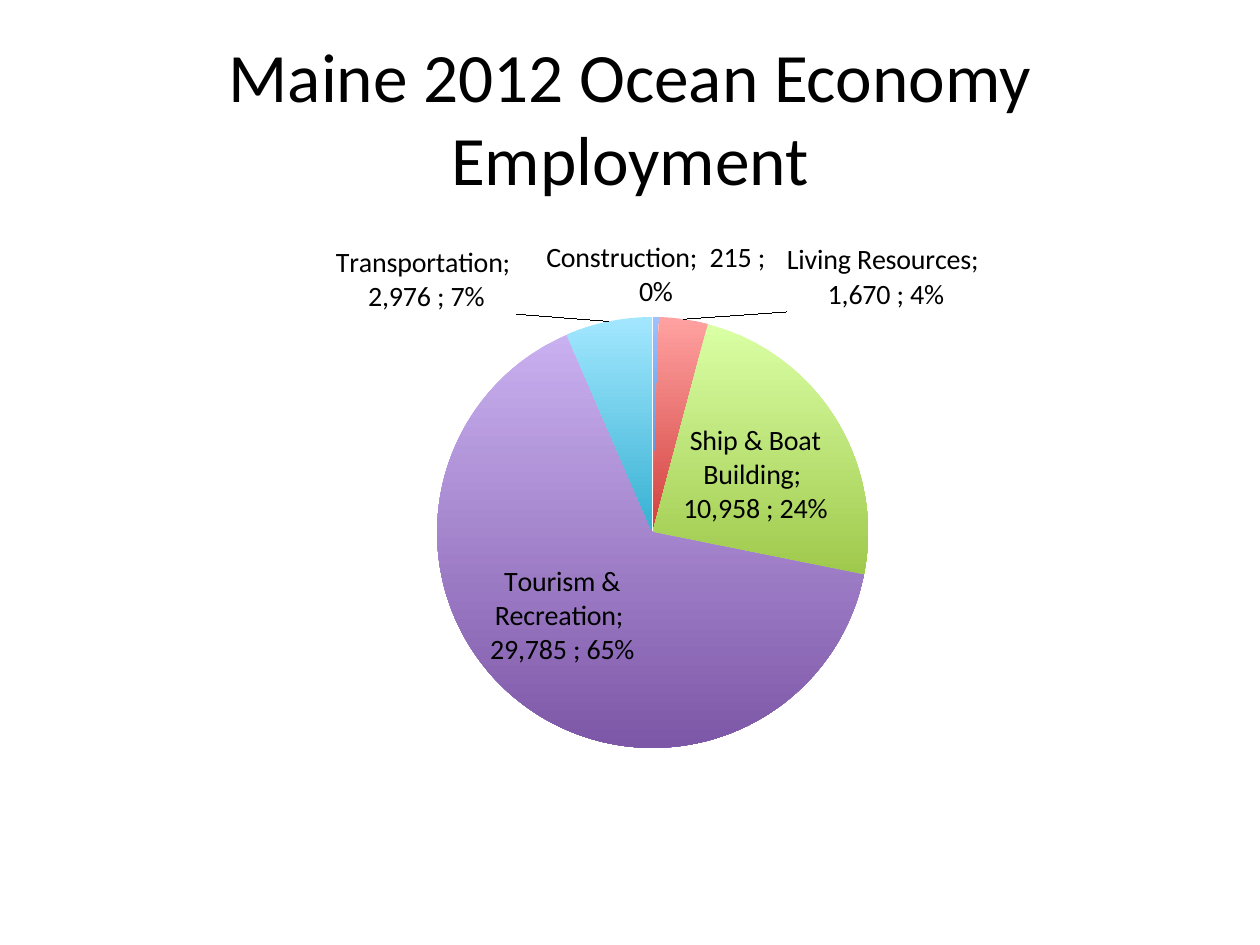
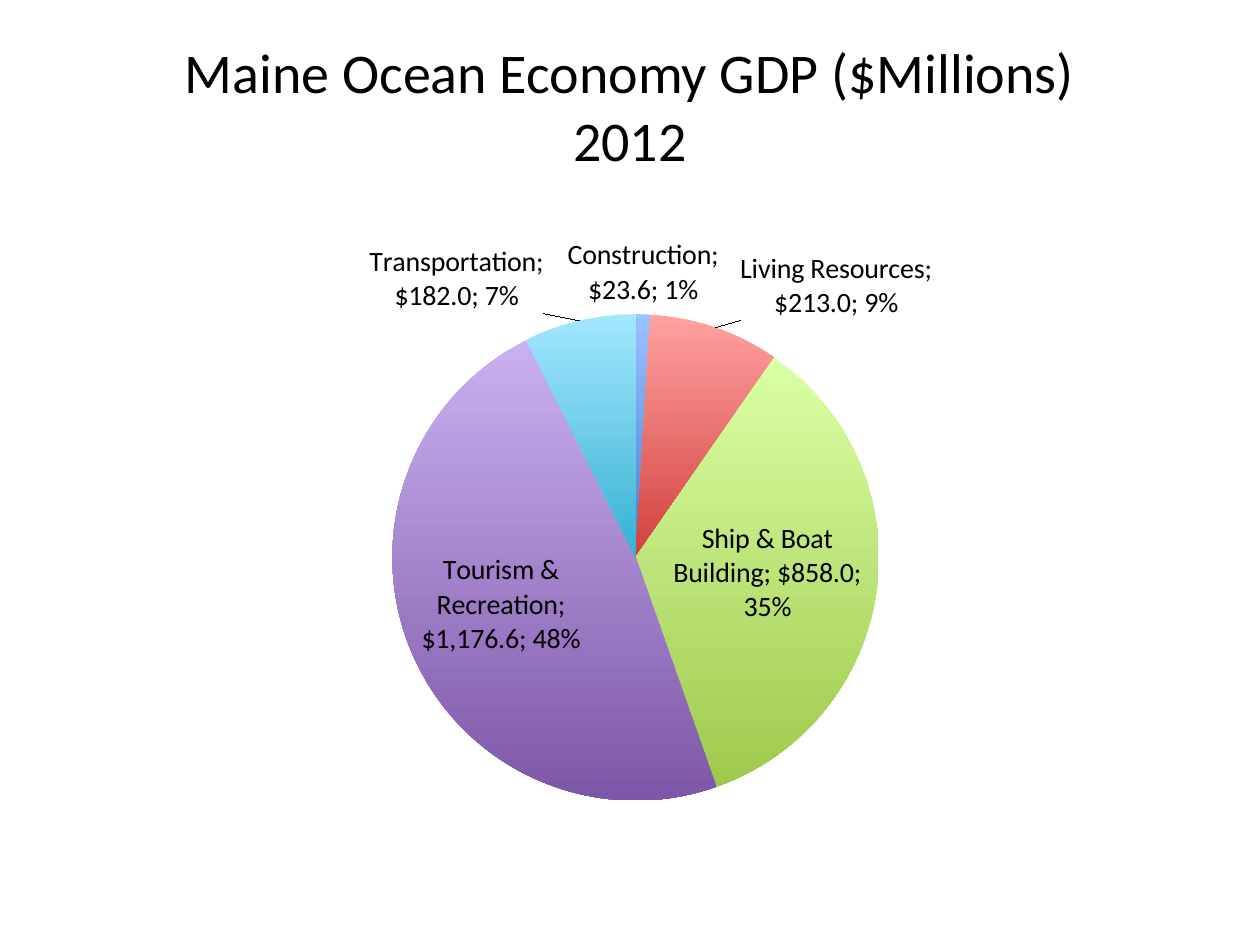
from dataclasses import dataclass, field

from lxml import etree
from pptx import Presentation
from pptx.chart.data import CategoryChartData
from pptx.dml.color import RGBColor
from pptx.enum.chart import XL_CHART_TYPE, XL_LABEL_POSITION
from pptx.enum.text import MSO_ANCHOR, PP_ALIGN
from pptx.oxml.ns import qn
from pptx.util import Cm, Pt

PIE = XL_CHART_TYPE.PIE
OUTSIDE = XL_LABEL_POSITION.OUTSIDE_END
INSIDE = XL_LABEL_POSITION.CENTER
MIDDLE = MSO_ANCHOR.MIDDLE
CENTER = PP_ALIGN.CENTER


@dataclass(frozen=True)
class Theme:
    font: str = "Calibri"
    ink: str = "000000"
    paper: str = "FFFFFF"
    chart_size: float = 18
    label_size: float = 16
    gradients: dict = field(default_factory=lambda: {
        "Construction": ("9BC1FF", "3F80CD"),
        "Living Resources": ("FFA2A1", "D1403C"),
        "Ship & Boat Building": ("DAFFA5", "9FC94C"),
        "Tourism & Recreation": ("C9B0F0", "7D57A7"),
        "Transportation": ("A3E7FF", "36B1D2"),
    })


@dataclass(frozen=True)
class SectorLabel:
    position: object
    dx: float = 0


@dataclass(frozen=True)
class SectorSlide:
    title: str
    title_top: float
    title_size: float
    values: tuple
    number_format: str
    pie_box: tuple
    labels: tuple


THEME = Theme()
LEFT, WIDTH = Cm(1.27), Cm(22.86)
TITLE_HEIGHT = Cm(3.18)
CHART_TOP, CHART_HEIGHT = Cm(4.45), Cm(12.57)

SLIDES = (
    SectorSlide(
        "Maine 2012 Ocean Economy Employment", 0.76, 39.6,
        (215, 1670, 10958, 29785, 2976),
        '_(* #,##0_);_(* \\(#,##0\\);_(* "-"??_);_(@_)',
        (0.33, 0.15, 0.38, 0.7),
        (SectorLabel(OUTSIDE), SectorLabel(OUTSIDE, 0.09),
         SectorLabel(INSIDE, 0.01), SectorLabel(INSIDE, -0.02),
         SectorLabel(OUTSIDE, -0.08)),
    ),
    SectorSlide(
        "Maine Ocean Economy GDP ($Millions)\n2012", 0.53, 32,
        (23.6, 213, 858, 1176.6, 182),
        '"$"#,##0.0',
        (0.29, 0.15, 0.43, 0.78),
        (SectorLabel(OUTSIDE), SectorLabel(OUTSIDE, 0.02),
         SectorLabel(INSIDE, 0.01), SectorLabel(INSIDE, -0.02),
         SectorLabel(OUTSIDE, -0.03)),
    ),
)


def style_font(font, size: float) -> None:
    font.name = THEME.font
    font.size = Pt(size)
    font.color.rgb = RGBColor.from_string(THEME.ink)


def add_text(slide, text: str, *, top: float, size: float,
             align=CENTER, anchor=MIDDLE) -> None:
    frame = slide.shapes.add_textbox(LEFT, Cm(top), WIDTH, TITLE_HEIGHT).text_frame
    frame.word_wrap = True
    frame.vertical_anchor = anchor
    paragraph = frame.paragraphs[0]
    paragraph.text = text
    paragraph.alignment = align
    for run in paragraph.runs:
        style_font(run.font, size)


def set_layout(parent, index: int, **settings) -> None:
    for previous in parent.findall(qn("c:layout")):
        parent.remove(previous)
    layout = etree.Element(qn("c:layout"))
    manual = etree.SubElement(layout, qn("c:manualLayout"))
    for tag, value in settings.items():
        etree.SubElement(manual, qn(f"c:{tag}")).set("val", str(value))
    parent.insert(index, layout)


def add_separator(label) -> None:
    separator = etree.Element(qn("c:separator"))
    separator.text = "; "
    label.find(qn("c:showBubbleSize")).addnext(separator)


def show_label_parts(label) -> None:
    for tag in ("showVal", "showCatName", "showPercent"):
        label.find(qn(f"c:{tag}")).set("val", "1")
    add_separator(label)


def format_sectors(series, placements: tuple) -> None:
    for index, (placement, gradient) in enumerate(
            zip(placements, THEME.gradients.values())):
        point = series.points[index]
        fill = point.format.fill
        fill.gradient()
        fill.gradient_angle = 270
        for stop, color in zip(fill.gradient_stops, gradient):
            stop.color.rgb = RGBColor.from_string(color)
        point.format.line.fill.background()
        style_font(point.data_label.font, THEME.label_size)
        point.data_label.position = placement.position

    style_font(series.data_labels.font, THEME.label_size)
    group = series._element.find(qn("c:dLbls"))
    show_label_parts(group)
    for label, placement in zip(group.findall(qn("c:dLbl")), placements):
        show_label_parts(label)
        if placement.dx:
            set_layout(label, 1, x=placement.dx, y=0)


def add_sector_pie(slide, content: SectorSlide) -> None:
    sectors = CategoryChartData(number_format=content.number_format)
    sectors.categories = list(THEME.gradients)
    sectors.add_series("Series 1", content.values)
    chart = slide.shapes.add_chart(
        PIE, LEFT, CHART_TOP, WIDTH, CHART_HEIGHT, sectors).chart
    chart.has_title = False
    chart.has_legend = False
    style_font(chart.font, THEME.chart_size)
    plot = chart.plots[0]
    plot.vary_by_categories = True
    x, y, w, h = content.pie_box
    set_layout(chart._chartSpace.find(f"{qn('c:chart')}/{qn('c:plotArea')}"), 0,
               layoutTarget="inner", xMode="edge", yMode="edge", x=x, y=y, w=w, h=h)
    format_sectors(plot.series[0], content.labels)


def main() -> None:
    deck = Presentation()
    deck.slide_width, deck.slide_height = Cm(25.4), Cm(19.05)
    for content in SLIDES:
        slide = deck.slides.add_slide(deck.slide_layouts[6])
        slide.background.fill.solid()
        slide.background.fill.fore_color.rgb = RGBColor.from_string(THEME.paper)
        add_text(slide, content.title, top=content.title_top, size=content.title_size)
        add_sector_pie(slide, content)
    deck.save("out.pptx")


if __name__ == "__main__":
    main()
